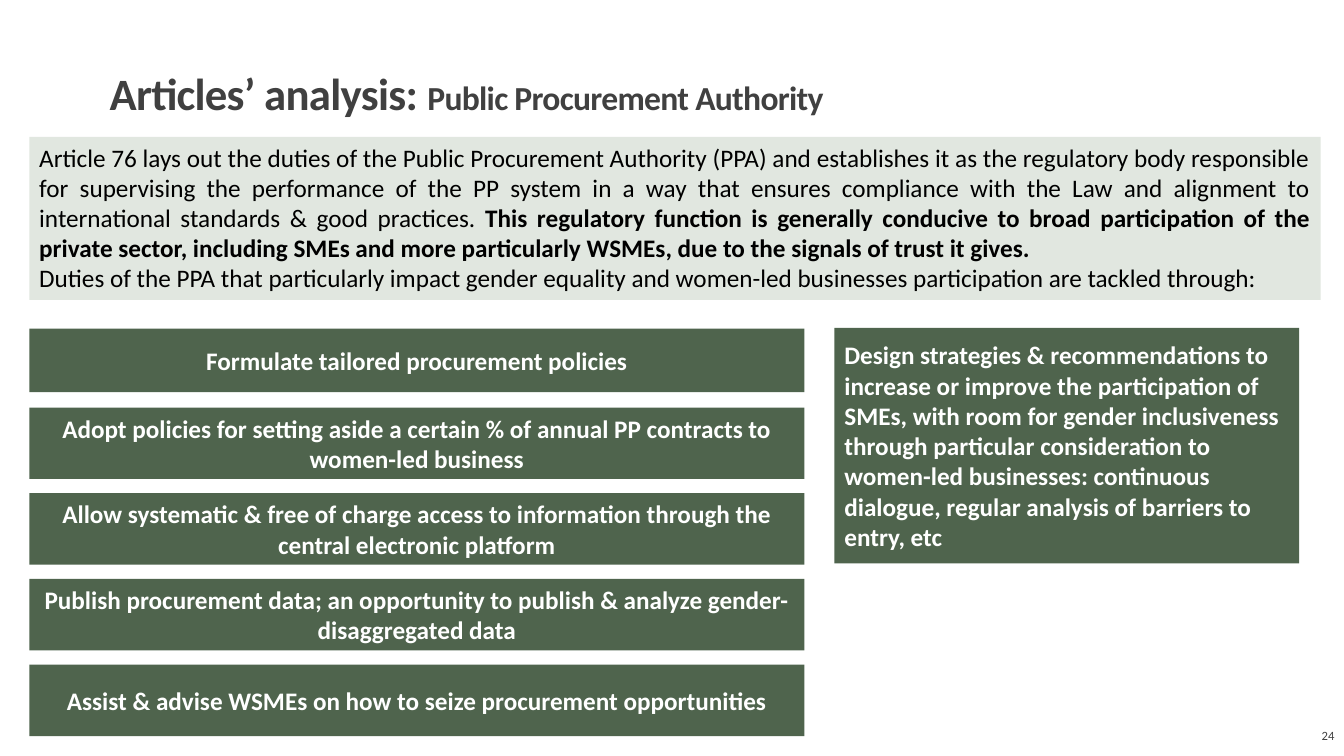
from pptx import Presentation
from pptx.dml.color import RGBColor
from pptx.enum.shapes import MSO_SHAPE
from pptx.enum.text import MSO_ANCHOR, MSO_AUTO_SIZE, PP_ALIGN
from pptx.util import Cm, Pt

RECTANGLE = MSO_SHAPE.RECTANGLE
TOP, MIDDLE, BOTTOM = MSO_ANCHOR.TOP, MSO_ANCHOR.MIDDLE, MSO_ANCHOR.BOTTOM
LEFT, CENTER, RIGHT, JUSTIFY = PP_ALIGN.LEFT, PP_ALIGN.CENTER, PP_ALIGN.RIGHT, PP_ALIGN.JUSTIFY
NO_FIT, GROW = MSO_AUTO_SIZE.NONE, MSO_AUTO_SIZE.SHAPE_TO_FIT_TEXT

FONT = "Calibri"
GREEN, PALE, GREY = "4F644D", "E1E7E0", "404040"
BLACK, WHITE = "000000", "FFFFFF"

TITLE = "Articles’ analysis: "
SUBTITLE = "Public Procurement Authority"
INTRO = (
    "Article 76 lays out the duties of the Public Procurement Authority (PPA) and "
    "establishes it as the regulatory body responsible for supervising the performance "
    "of the PP system in a way that ensures compliance with the Law and alignment to "
    "international standards & good practices. "
)
INTRO_KEY = (
    "This regulatory function is generally conducive to broad participation of the "
    "private sector, including SMEs and more particularly WSMEs, due to the signals of "
    "trust it gives."
)
INTRO_END = (
    "Duties of the PPA that particularly impact gender equality and women-led businesses "
    "participation are tackled through:"
)
FIRST_DUTY = "Formulate tailored procurement policies"
OTHER_DUTIES = [
    "Adopt policies for setting aside a certain % of annual PP contracts to women-led business",
    "Allow systematic & free of charge access to information through the central electronic platform",
    "Publish procurement data; an opportunity to publish & analyze gender-disaggregated data",
    "Assist & advise WSMEs on how to seize procurement opportunities",
]
STRATEGIES = (
    "Design strategies & recommendations to increase or improve the participation of SMEs, "
    "with room for gender inclusiveness through particular consideration to women-led "
    "businesses: continuous dialogue, regular analysis of barriers to entry, etc"
)

MARGIN, DUTY_WIDTH = 0.74, 19.53
DUTY_TOP, DUTY_HEIGHT, DUTY_STEP = 10.27, 1.8, 2.16


def colour(value):
    return RGBColor.from_string(value)


def add_span(para, text, size, ink, bold=False):
    span = para.add_run()
    span.text = text
    span.font.name = FONT
    span.font.size = Pt(size)
    span.font.bold = bold
    span.font.color.rgb = colour(ink)
    return span


def set_frame(frame, anchor, fit=NO_FIT):
    frame.word_wrap = True
    frame.auto_size = fit
    frame.vertical_anchor = anchor


def add_panel(page, left, top, width, height, fill):
    box = page.shapes.add_shape(RECTANGLE, Cm(left), Cm(top), Cm(width), Cm(height))
    box.shadow.inherit = False
    box.fill.solid()
    box.fill.fore_color.rgb = colour(fill)
    box.line.fill.background()
    return box


def add_title(page):
    title = page.shapes.title
    title.left, title.top, title.width, title.height = Cm(2.51), Cm(0.84), Cm(29.11), Cm(2.29)
    set_frame(title.text_frame, BOTTOM)
    para = title.text_frame.paragraphs[0]
    para.alignment = LEFT
    para.line_spacing = 0.8
    for text, size in ((TITLE, 32), (SUBTITLE, 24)):
        span = add_span(para, text, size, GREY, True)
        span.font._element.set("spc", "-50")


def add_intro(page):
    frame = add_panel(page, MARGIN, 3.45, 32.54, 4.11, PALE).text_frame
    set_frame(frame, TOP, GROW)
    para = frame.paragraphs[0]
    add_span(para, INTRO, 18, BLACK)
    add_span(para, INTRO_KEY, 18, BLACK, True)
    add_span(frame.add_paragraph(), INTRO_END, 18, BLACK)
    for para in frame.paragraphs:
        para.alignment = JUSTIFY


def add_duty(page, text, left, top, width, height, alignment=CENTER):
    frame = add_panel(page, left, top, width, height, GREEN).text_frame
    set_frame(frame, MIDDLE)
    para = frame.paragraphs[0]
    para.alignment = alignment
    add_span(para, text, 18, WHITE, True)


def add_page_number(page):
    box = page.shapes.add_textbox(Cm(31.62), Cm(18.03), Cm(2.26), Cm(1.02))
    set_frame(box.text_frame, MIDDLE)
    para = box.text_frame.paragraphs[0]
    para.alignment = RIGHT
    add_span(para, "24", 9, GREY)


def main():
    deck = Presentation()
    deck.slide_width, deck.slide_height = Cm(33.87), Cm(19.05)
    page = deck.slides.add_slide(deck.slide_layouts[5])
    add_title(page)
    add_intro(page)
    add_duty(page, FIRST_DUTY, MARGIN, 8.28, DUTY_WIDTH, 1.6)
    for index, duty in enumerate(OTHER_DUTIES):
        add_duty(page, duty, MARGIN, DUTY_TOP + index * DUTY_STEP, DUTY_WIDTH, DUTY_HEIGHT)
    add_duty(page, STRATEGIES, 21.03, 8.26, 11.71, 5.94, LEFT)
    add_page_number(page)
    deck.save("out.pptx")


if __name__ == "__main__":
    main()
